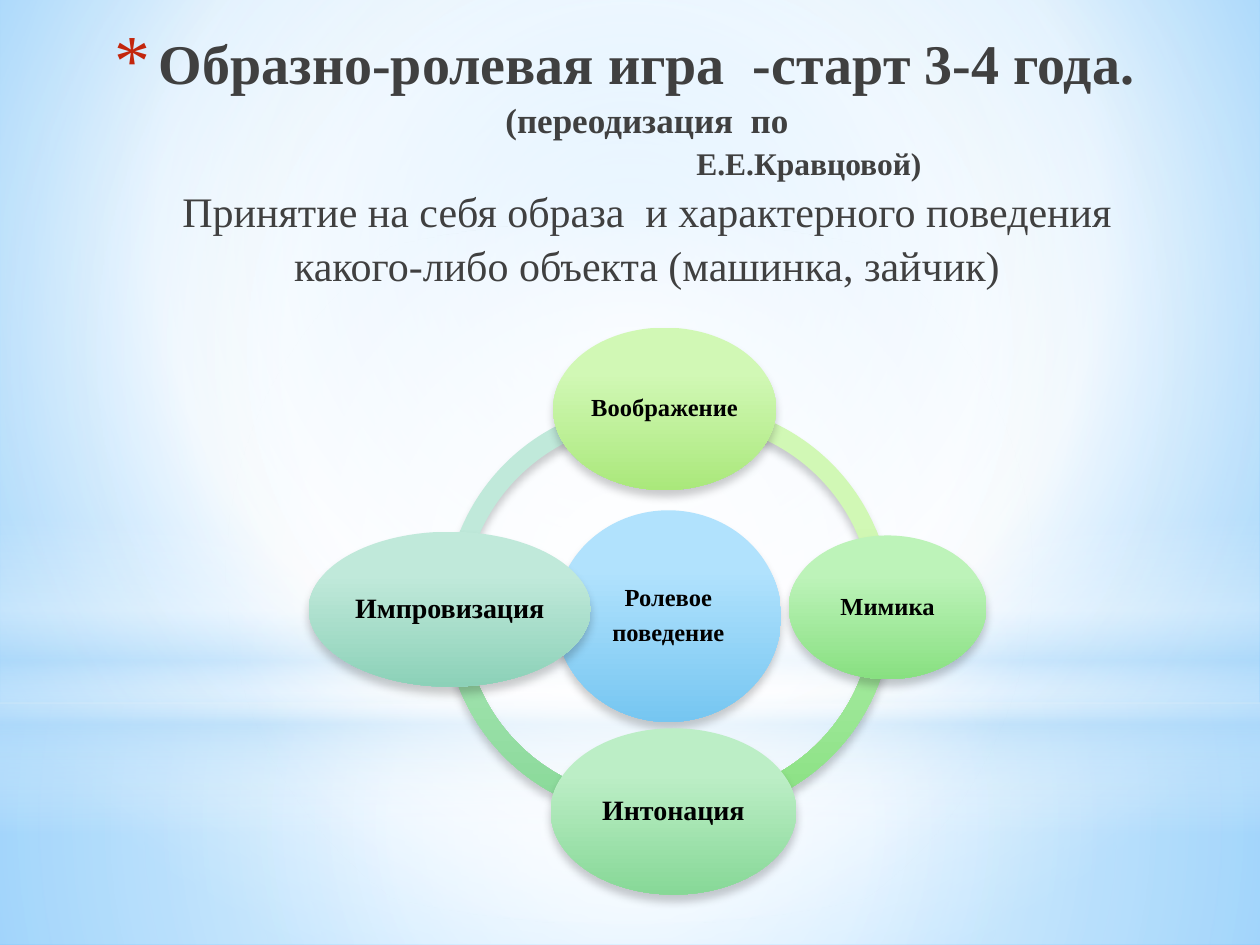
from pptx import Presentation
from pptx.dml.color import RGBColor
from pptx.enum.shapes import MSO_SHAPE
from pptx.enum.text import MSO_ANCHOR, MSO_AUTO_SIZE, PP_ALIGN
from pptx.oxml import parse_xml
from pptx.oxml.ns import nsdecls, qn
from pptx.util import Inches, Pt

RECTANGLE, OVAL, ARC = MSO_SHAPE.RECTANGLE, MSO_SHAPE.OVAL, MSO_SHAPE.BLOCK_ARC
CENTER, TOP, MIDDLE = PP_ALIGN.CENTER, MSO_ANCHOR.TOP, MSO_ANCHOR.MIDDLE
FONT = "Times New Roman"

WHITE = RGBColor(0xFF, 0xFF, 0xFF)
HAZE = RGBColor(0xB4, 0xDC, 0xFA)
SKY = RGBColor(0x9E, 0xD5, 0xFF)
DEEP_SKY = RGBColor(0x5B, 0xB9, 0xFF)
BLACK = RGBColor(0, 0, 0)
TITLE_GRAY = RGBColor(0x40, 0x40, 0x40)
BULLET_RED = RGBColor(0xC3, 0x26, 0x0C)

# Light and dark end of each diagram colour
BLUE = (RGBColor(0xB1, 0xE2, 0xFD), RGBColor(0x76, 0xC6, 0xF1))
LIME = (RGBColor(0xD1, 0xF8, 0xB5), RGBColor(0xAA, 0xE8, 0x7B))
GREEN = (RGBColor(0xBD, 0xF3, 0xB9), RGBColor(0x88, 0xE0, 0x81))
MINT = (RGBColor(0xBC, 0xEE, 0xC6), RGBColor(0x87, 0xD8, 0x97))
TEAL = (RGBColor(0xC0, 0xE9, 0xDA), RGBColor(0x8C, 0xD1, 0xB8))

# Gradient stops: position, colour, opacity (percent)
MIDDLE_FOCUS = (50, 50, 50, 50)
BACKDROP = [
    (RECTANGLE, (0, 5.58, 10, 1.92),
     [(0, WHITE, 91), (37, WHITE, 76), (100, HAZE, 79)], MIDDLE_FOCUS),
    (RECTANGLE, (0, 0, 10, 5.58),
     [(0, WHITE, 89), (48, WHITE, 62), (100, HAZE, 79)], MIDDLE_FOCUS),
    (RECTANGLE, (0, 4.12, 10, 2.5),
     [(0, WHITE, 0), (29, WHITE, 30), (45, HAZE, 40), (55, WHITE, 26),
      (65, HAZE, 60), (100, WHITE, 0)], None),
    (OVAL, (0, 1.75, 10, 5.58), [(0, WHITE, 100), (56, WHITE, 0)], MIDDLE_FOCUS),
]

# Title lines: text, size, bold, left indent
TITLE_LINES = [
    ("Образно-ролевая игра  -старт 3-4 года.", 32, True, 0.35),
    ("(переодизация  по", 20, True, 0.35),
    ("Е.Е.Кравцовой)", 18, True, 2.92),
    ("Принятие на себя образа  и характерного поведения "
     "какого-либо объекта (машинка, зайчик)", 24, False, 0.35),
]

# Ring segments: left, top, start angle, end angle, colours
RING_SIZE = 3.27
RING = [
    (3.53, 3.2, 108.07, 164.37, TEAL),
    (3.53, 3.22, 50.31, 108.35, MINT),
    (3.81, 3.21, 215.43, 56.31, GREEN),
    (3.81, 3.2, 158.38, 215.7, LIME),
]

# Ovals: place, lines, text size, colours
OVALS = [
    ((4.41, 4.05, 1.79, 1.68), ["Ролевое", "поведение"], 14, BLUE),
    ((4.39, 2.6, 1.77, 1.29), ["Воображение"], 14, LIME),
    ((6.26, 4.25, 1.57, 1.14), ["Мимика"], 14, GREEN),
    ((4.37, 5.78, 1.95, 1.32), ["Интонация"], 16, MINT),
    ((2.45, 4.22, 2.24, 1.23), ["Импровизация"], 16, TEAL),
]


def set_values(target, values):
    for name, value in values.items():
        setattr(target, name, value)


def gradient(stops, focus=None):
    """Circular gradient around the focus, or a vertical one without it."""
    marks = "".join(
        f'<a:gs pos="{place * 1000}"><a:srgbClr val="{color}">'
        f'<a:alpha val="{opacity * 1000}"/></a:srgbClr></a:gs>'
        for place, color, opacity in stops)
    course = '<a:lin ang="5400000" scaled="0"/>'
    if focus:
        sides = " ".join(f'{side}="{part * 1000}"' for side, part in zip("ltrb", focus))
        course = f'<a:path path="circle"><a:fillToRect {sides}/></a:path>'
    return parse_xml(f'<a:gradFill {nsdecls("a")} rotWithShape="1">'
                     f'<a:gsLst>{marks}</a:gsLst>{course}</a:gradFill>')


def add_gradient_shape(page, kind, place, stops, focus=None):
    shape = page.shapes.add_shape(kind, *map(Inches, place))
    shape.fill.background()
    properties = shape._element.spPr
    properties.replace(properties.find(qn("a:noFill")), gradient(stops, focus))
    shape.line.fill.background()
    shape.shadow.inherit = False
    return shape


def add_diagram_shape(page, kind, place, colors):
    light, dark = colors
    shape = add_gradient_shape(page, kind, place, [(28, light, 100), (100, dark, 100)])
    shape._element.spPr.find(qn("a:effectLst")).append(parse_xml(
        f'<a:outerShdw {nsdecls("a")} blurRad="{Pt(5)}" dist="{Pt(4)}" dir="5400000" '
        'rotWithShape="0"><a:srgbClr val="000000"><a:alpha val="20000"/>'
        '</a:srgbClr></a:outerShdw>'))
    return shape


def write_lines(frame, lines, para_format):
    """Fill a text frame from (text, font format) pairs and return its paragraphs."""
    for number, (text, font_format) in enumerate(lines):
        para = frame.add_paragraph() if number else frame.paragraphs[0]
        set_values(para, para_format)
        span = para.add_run()
        span.text = text
        set_values(span.font, {"name": FONT, **font_format["font"]})
        span.font.color.rgb = font_format["color"]
    return frame.paragraphs


def add_backdrop(page):
    page.background.fill.solid()
    holder = page._element.find(".//" + qn("p:bgPr"))
    stops = [(0, SKY, 100), (60, WHITE, 100), (100, DEEP_SKY, 100)]
    holder.replace(holder.find(qn("a:solidFill")), gradient(stops, (20, 10, 20, 60)))
    for kind, place, stops, focus in BACKDROP:
        add_gradient_shape(page, kind, place, stops, focus)


def add_title(page):
    title = page.shapes.title
    title._element.getparent().append(title._element)  # bring above the backdrop
    set_values(title, {"left": Inches(0.59), "top": Inches(0.13),
                       "width": Inches(8.74), "height": Inches(3.46)})
    frame = title.text_frame
    set_values(frame, {"word_wrap": True, "auto_size": MSO_AUTO_SIZE.NONE,
                       "vertical_anchor": TOP})
    lines = [(text, {"font": {"size": Pt(size), "bold": bold}, "color": TITLE_GRAY})
             for text, size, bold, _ in TITLE_LINES]
    paras = write_lines(frame, lines, {"alignment": CENTER, "line_spacing": 1.08,
                                       "space_before": Pt(0)})
    for para, (_, _, _, indent) in zip(paras, TITLE_LINES):
        settings = para._p.get_or_add_pPr()
        settings.set("marL", str(Inches(indent)))
        settings.set("indent", "0")

    # Red asterisk on the first line
    settings = paras[0]._p.get_or_add_pPr()
    settings.set("indent", str(-Inches(0.35)))
    for mark in (f'<a:buClr {nsdecls("a")}><a:srgbClr val="{BULLET_RED}"/></a:buClr>',
                 f'<a:buSzPct {nsdecls("a")} val="128000"/>',
                 f'<a:buFont {nsdecls("a")} typeface="{FONT}"/>',
                 f'<a:buChar {nsdecls("a")} char="*"/>'):
        settings.append(parse_xml(mark))


def add_ring(page):
    for left, top, start, end, colors in RING:
        segment = add_diagram_shape(page, ARC, (left, top, RING_SIZE, RING_SIZE), colors)
        for number, value in enumerate((start, end, 0.046)):
            segment.adjustments[number] = value


def add_oval(page, place, words, size, colors):
    frame = add_diagram_shape(page, OVAL, place, colors).text_frame
    margins = dict.fromkeys(
        ("margin_left", "margin_top", "margin_right", "margin_bottom"), Inches(0.02))
    set_values(frame, {"word_wrap": True, "vertical_anchor": MIDDLE, **margins})
    style = {"font": {"size": Pt(size), "bold": True}, "color": BLACK}
    paras = write_lines(frame, [(word, style) for word in words],
                        {"alignment": CENTER, "line_spacing": 0.9})
    for para in paras[:-1]:
        para.space_after = Pt(5)


def main():
    deck = Presentation()
    deck.slide_width, deck.slide_height = Inches(10), Inches(7.5)
    page = deck.slides.add_slide(deck.slide_layouts[5])
    add_backdrop(page)
    add_title(page)
    add_ring(page)
    for oval in OVALS:
        add_oval(page, *oval)
    deck.save("out.pptx")


if __name__ == "__main__":
    main()
